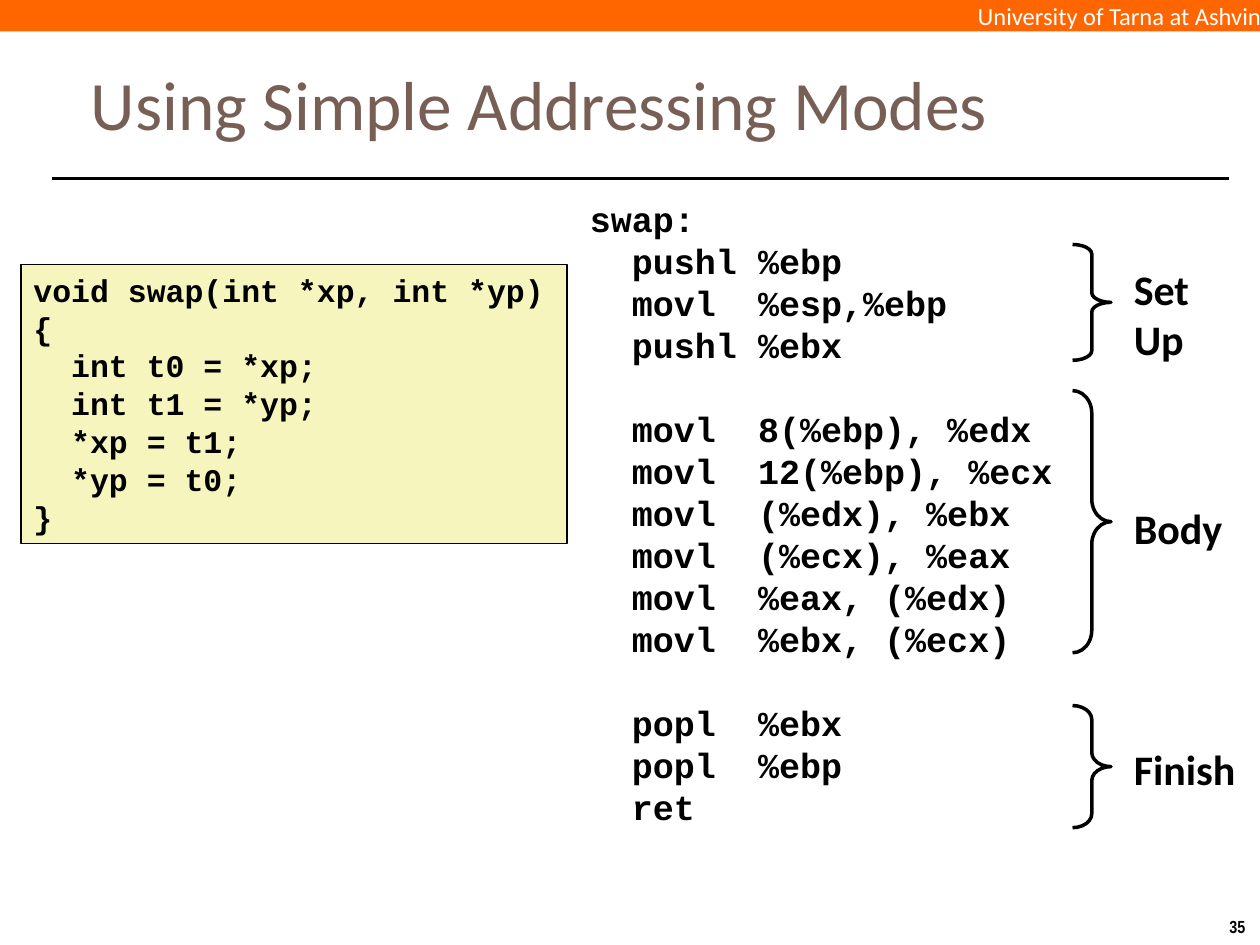
"""Build the slide on simple addressing modes in the swap function."""
from lxml import etree
from pptx import Presentation, util as u
from pptx.dml.color import RGBColor
from pptx.enum import shapes, text
from pptx.oxml.ns import qn

COLORS = {
    "orange": "FF6600",
    "brown": "775F55",
    "cream": "F6F5BD",
    "black": "000000",
    "white": "FFFFFF",
}

SWAP_SOURCE = """void swap(int *xp, int *yp)
{
  int t0 = *xp;
  int t1 = *yp;
  *xp = t1;
  *yp = t0;
}"""

ASSEMBLY_BLOCKS = [
    """swap:
  pushl %ebp
  movl  %esp,%ebp
  pushl %ebx""",
    """  movl  8(%ebp), %edx
  movl  12(%ebp), %ecx
  movl  (%edx), %ebx
  movl  (%ecx), %eax
  movl  %eax, (%edx)
  movl  %ebx, (%ecx)""",
    """  popl  %ebx
  popl  %ebp
  ret""",
]

PHASES = [
    ("Set\nUp", 146.9, 139.7, 66.2, 0.25),
    ("Body", 283.7, 223.2, 149.8, 0.585),
    ("Finish", 421.2, 403.2, 69.8, 0.362),
]


class SlideBuilder:
    """Hold the style and the current slide."""

    body_font = "Calibri"
    code_font = "Courier New"
    number_font = "Arial Narrow"
    code_leading = 1.2

    def __init__(self, presentation):
        self.slide = presentation.slides.add_slide(presentation.slide_layouts[5])

    def color(self, name):
        return RGBColor.from_string(COLORS[name])

    def box(self, left, top, width, height):
        return [u.Pt(length) for length in (left, top, width, height)]

    def format_runs(self, frame, size, color="black", font=body_font, bold=True):
        for paragraph in frame.paragraphs:
            for run in paragraph.runs:
                run.font.name = font
                run.font.size = u.Pt(size)
                run.font.bold = bold
                run.font.color.rgb = self.color(color)

    def title(self, wording, left, top, width, height):
        shape = self.slide.shapes.title
        shape.left, shape.top, shape.width, shape.height = self.box(left, top, width, height)
        frame = shape.text_frame
        frame.text = wording
        frame.vertical_anchor = text.MSO_ANCHOR.MIDDLE
        frame.paragraphs[0].alignment = text.PP_ALIGN.LEFT
        self.format_runs(frame, 39.6, "brown", bold=False)

    def shape(self, kind, bounds, fill=None, line=None, line_width=1):
        shape = self.slide.shapes.add_shape(kind, *self.box(*bounds))
        shape.shadow.inherit = False
        if fill:
            shape.fill.solid()
            shape.fill.fore_color.rgb = self.color(fill)
        else:
            shape.fill.background()
        if line:
            shape.line.color.rgb = self.color(line)
            shape.line.width = u.Pt(line_width)
        else:
            shape.line.fill.background()
        return shape

    def banner(self, wording, bounds):
        frame = self.shape(shapes.MSO_SHAPE.RECTANGLE, bounds, "orange").text_frame
        frame.margin_left = frame.margin_right = frame.margin_top = frame.margin_bottom = 0
        frame.vertical_anchor = text.MSO_ANCHOR.MIDDLE
        frame.text = wording
        frame.paragraphs[0].alignment = text.PP_ALIGN.RIGHT
        self.format_runs(frame, 14, "white", bold=False)

    def rule(self, left, right, top):
        line = self.slide.shapes.add_connector(
            shapes.MSO_CONNECTOR.STRAIGHT, u.Pt(left), u.Pt(top), u.Pt(right), u.Pt(top))
        line.line.color.rgb = self.color("black")
        line.line.width = u.Pt(1.5)
        etree.SubElement(line._element.spPr, qn("a:effectLst"))

    def label(self, wording, bounds, size=24, font=body_font):
        frame = self.slide.shapes.add_textbox(*self.box(*bounds)).text_frame
        frame.word_wrap = False
        frame.text = wording
        self.format_runs(frame, size, font=font)

    def brace(self, bounds, curl):
        brace = self.shape(shapes.MSO_SHAPE.RIGHT_BRACE, bounds, line="black", line_width=2)
        brace.adjustments[0] = curl
        brace.adjustments[1] = 0.5

    def code(self, blocks, bounds, size, fill=None, line=None):
        shape = self.shape(shapes.MSO_SHAPE.RECTANGLE, bounds, fill, line)
        frame = shape.text_frame
        frame.word_wrap = True
        frame.vertical_anchor = text.MSO_ANCHOR.TOP
        frame.margin_top = u.Pt(3.6)
        frame.margin_bottom = 0
        frame.text = "\n".join(blocks)
        leading = u.Pt(size * self.code_leading)
        for paragraph in frame.paragraphs:
            paragraph.alignment = text.PP_ALIGN.LEFT
            paragraph.line_spacing = leading
        start = 0
        for block in blocks[:-1]:
            start += len(block.splitlines())
            frame.paragraphs[start].space_before = leading
        self.format_runs(frame, size, font=self.code_font)


def main():
    presentation = Presentation()
    presentation.slide_width = u.Pt(720)
    presentation.slide_height = u.Pt(540)

    builder = SlideBuilder(presentation)
    builder.banner("University of Tarna at Ashvin", (0, 0, 720.7, 18))
    builder.rule(30, 702, 102)
    builder.label("35", (695.5, 520, 24.5, 19.4), 10, builder.number_font)
    builder.title("Using Simple Addressing Modes", 44.6, 36, 603.4, 45.4)
    builder.code([SWAP_SOURCE], (12, 151.2, 312, 159.4), 18, "cream", "black")
    for name, label_top, brace_top, brace_height, curl in PHASES:
        builder.brace((612.9, brace_top, 22, brace_height), curl)
        builder.label(name, (640.8, label_top, 74, 36 * len(name.splitlines())))
    builder.code(ASSEMBLY_BLOCKS, (330, 109.4, 330, 370.8), 20)

    presentation.save("out.pptx")


if __name__ == "__main__":
    main()
